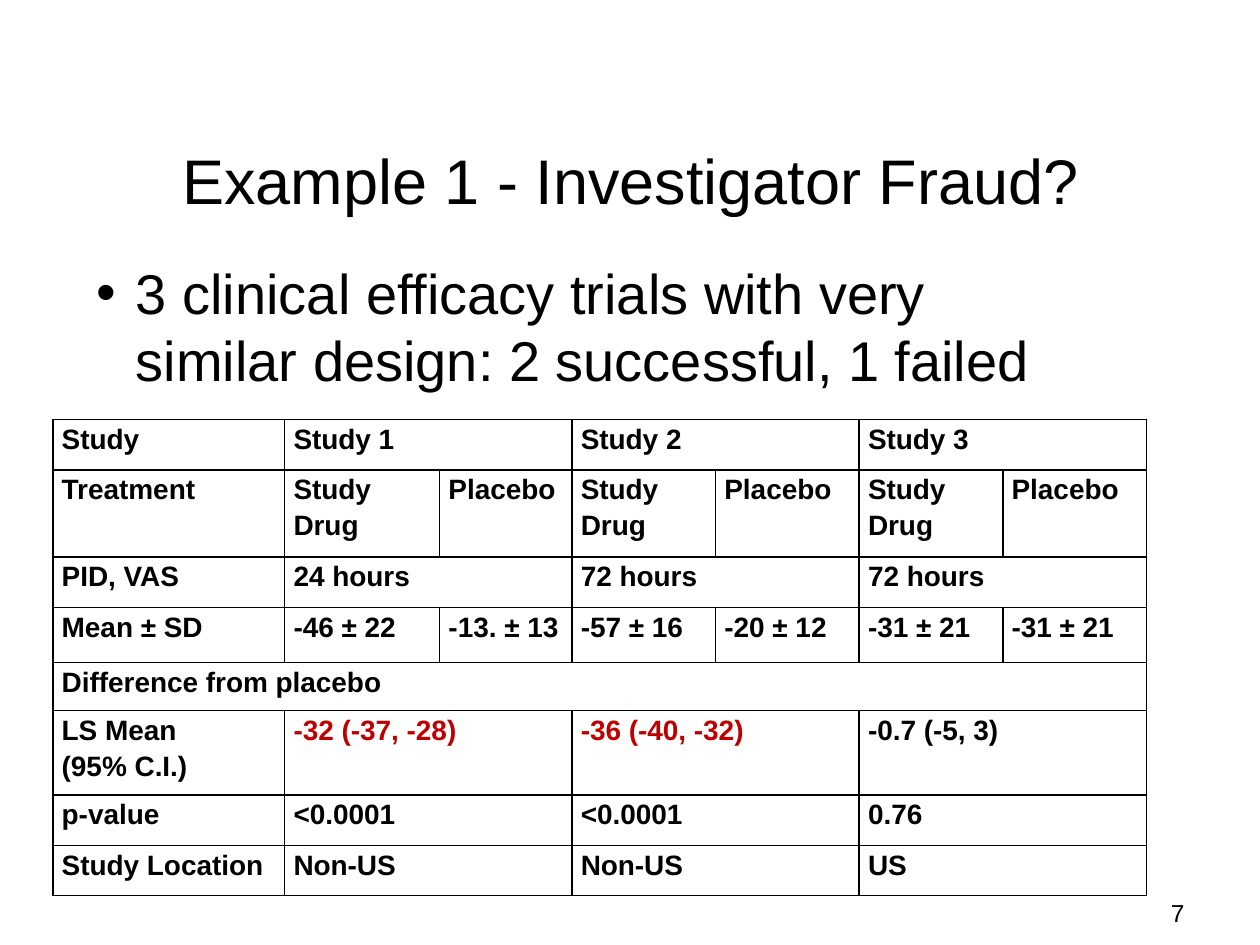
from lxml.etree import SubElement
from pptx import Presentation
from pptx.dml.color import RGBColor
from pptx.enum.text import MSO_ANCHOR, PP_ALIGN
from pptx.oxml import parse_xml
from pptx.oxml.ns import nsdecls, qn
from pptx.util import Inches, Pt

# Content: a row holds 7 values, 4 (a label and one per study) or 1 (full width)
TITLE = "Example 1 - Investigator Fraud?"
BULLET = "3 clinical efficacy trials with very similar design: 2 successful, 1 failed"
PAGE_NUMBER = "7"
ROWS = [
    (0.4, ["Study", "Study 1", "Study 2", "Study 3"]),
    (0.69, ["Treatment"] + ["Study Drug", "Placebo"] * 3),
    (0.4, ["PID, VAS", "24 hours", "72 hours", "72 hours"]),
    (0.44, ["Mean ± SD", "-46 ± 22", "-13. ± 13", "-57 ± 16", "-20 ± 12",
            "-31 ± 21", "-31 ± 21"]),
    (0.38, ["Difference from placebo"]),
    (0.67, ["LS Mean\n(95% C.I.)", "-32 (-37, -28)", "-36 (-40, -32)", "-0.7 (-5, 3)"]),
    (0.4, ["p-value", "<0.0001", "<0.0001", "0.76"]),
    (0.4, ["Study Location", "Non-US", "Non-US", "US"]),
]
SIGNIFICANT = {"-32 (-37, -28)", "-36 (-40, -32)"}
COLUMN_WIDTHS = [1.84, 1.23, 1.05, 1.14, 1.14, 1.14, 1.14]
SPANS = {7: [1] * 7, 4: [1, 2, 2, 2], 1: [7]}

THEME = {
    "font": "Arial", "ink": "000000", "accent": "C00000",
    "title": 36, "body": 32, "table": 16, "number": 14, "border": 1,
}


def set_values(target, values):
    for name, value in values.items():
        setattr(target, name, value)


def place(shape, left, top, width, height):
    set_values(shape, {"left": Inches(left), "top": Inches(top),
                       "width": Inches(width), "height": Inches(height)})


def write(frame, text, size, align=PP_ALIGN.LEFT, color="ink", bold=False, spacing=None):
    frame.text = text
    for para in frame.paragraphs:
        set_values(para, {"alignment": align, "line_spacing": spacing})
        for span in para.runs:
            set_values(span.font, {"name": THEME["font"], "size": Pt(THEME[size]),
                                   "bold": bold})
            span.font.color.rgb = RGBColor.from_string(THEME[color])


def add_box(page, area, text, size, align=PP_ALIGN.LEFT):
    box = page.shapes.add_textbox(*map(Inches, area))
    box.text_frame.word_wrap = True
    write(box.text_frame, text, size, align)
    return box


def add_borders(cell):
    properties = cell._tc.get_or_add_tcPr()
    for index, side in enumerate(("lnL", "lnR", "lnT", "lnB")):
        properties.insert(index, parse_xml(
            f'<a:{side} {nsdecls("a")} w="{Pt(THEME["border"])}"><a:solidFill>'
            f'<a:srgbClr val="{THEME["ink"]}"/></a:solidFill></a:{side}>'))


def add_results(page):
    height = sum(row_height for row_height, _ in ROWS)
    table = page.shapes.add_table(
        len(ROWS), len(COLUMN_WIDTHS), Inches(0.42), Inches(3.33),
        Inches(sum(COLUMN_WIDTHS)), Inches(height)).table
    set_values(table, {"first_row": False, "horz_banding": False})
    for column, width in zip(table.columns, COLUMN_WIDTHS):
        column.width = Inches(width)

    # Plain bordered grid
    for cell in table.iter_cells():
        set_values(cell, {"margin_left": Inches(0.07), "margin_right": Inches(0.07),
                          "margin_top": 0, "margin_bottom": 0})
        cell.fill.background()
        add_borders(cell)

    # Values, merged across the columns they cover
    for row, (row_height, values) in enumerate(ROWS):
        table.rows[row].height = Inches(row_height)
        column = 0
        for value, width in zip(values, SPANS[len(values)]):
            cell = table.cell(row, column)
            if width > 1:
                cell.merge(table.cell(row, column + width - 1))
            color = "accent" if value in SIGNIFICANT else "ink"
            write(cell.text_frame, value, "table", color=color, bold=True, spacing=1.15)
            column += width


def main():
    deck = Presentation()
    set_values(deck, {"slide_width": Inches(10), "slide_height": Inches(7.5)})
    page = deck.slides.add_slide(deck.slide_layouts[5])

    # Title
    title = page.shapes.title
    place(title, 0.67, 0.92, 8.67, 1)
    write(title.text_frame, TITLE, "title", PP_ALIGN.CENTER)
    title.text_frame.vertical_anchor = MSO_ANCHOR.MIDDLE

    # Results table and page number
    add_results(page)
    add_box(page, (7.17, 7.08, 2.33, 0.42), PAGE_NUMBER, "number", PP_ALIGN.RIGHT)

    # Bullet with a hanging indent
    bullet = add_box(page, (0.67, 2, 7.92, 1.18), BULLET, "body")
    properties = bullet.text_frame.paragraphs[0]._p.get_or_add_pPr()
    properties.set("marL", str(Inches(0.31)))
    properties.set("indent", str(-Inches(0.31)))
    SubElement(properties, qn("a:buFont")).set("typeface", THEME["font"])
    SubElement(properties, qn("a:buChar")).set("char", "•")

    deck.save("out.pptx")


if __name__ == "__main__":
    main()
